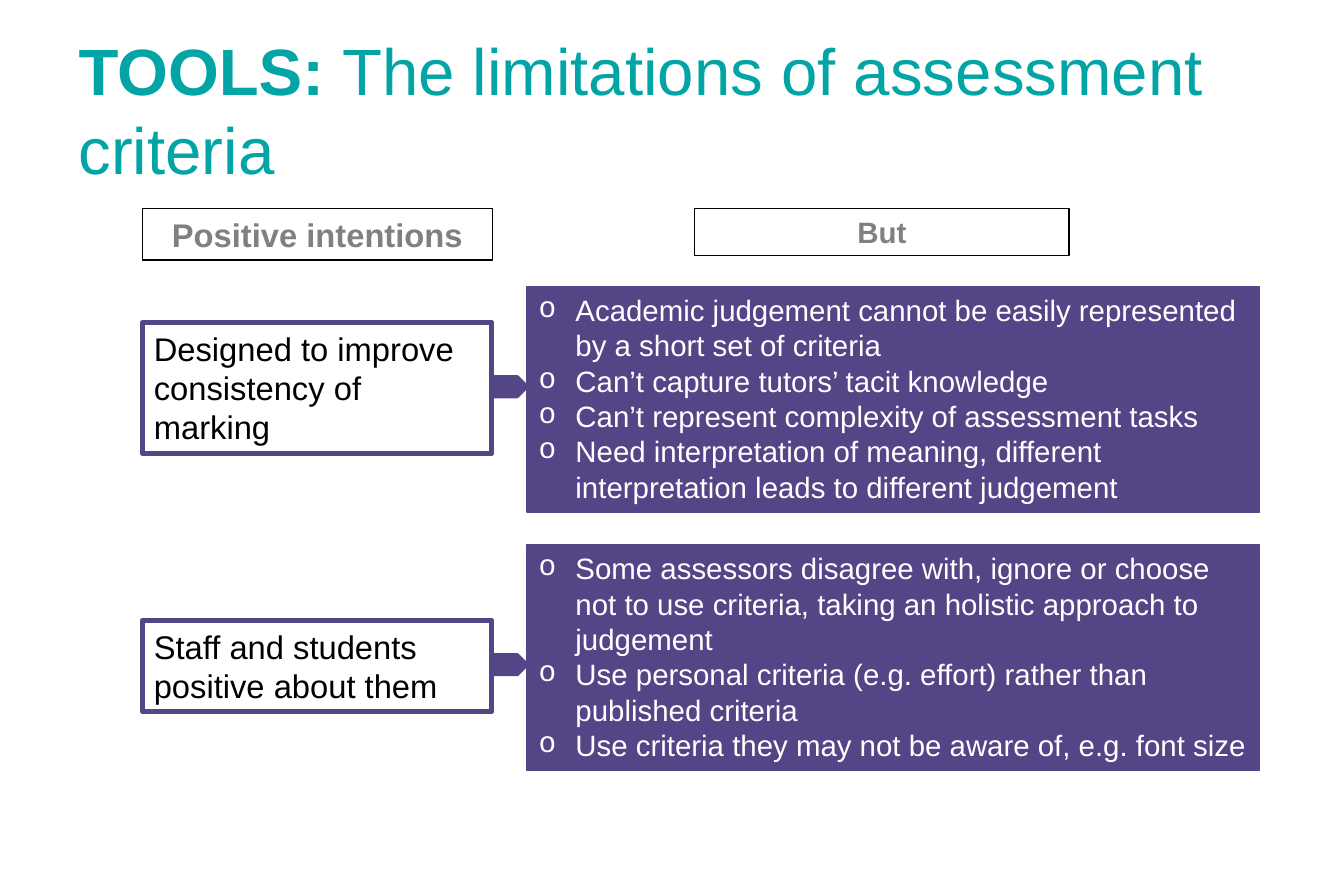
from lxml import etree
from pptx import Presentation
from pptx.dml.color import RGBColor
from pptx.enum import shapes, text
from pptx.oxml.ns import qn
from pptx.util import Pt

TITLE = [("TOOLS: ", True), ("The limitations of assessment criteria", False)]
# text, left, top, width, height, size
HEADINGS = [
    ("Positive intentions", 87, 127.5, 214.5, 31.5, 20),
    ("But", 425, 127.5, 229, 28.8, 18),
]
# intention, its top and height; limitations, their top; arrow top
ROWS = [
    (["Designed to improve consistency of", "marking"], 197.3, 80,
     ["Academic judgement cannot be easily represented by a short set of criteria",
      "Can’t capture tutors’ tacit knowledge",
      "Can’t represent complexity of assessment tasks",
      "Need interpretation of meaning, different interpretation leads to different judgement"],
     175, 230.4),
    (["Staff and students positive about them"], 379.5, 55.5,
     ["Some assessors disagree with, ignore or choose not to use criteria, "
      "taking an holistic approach to judgement",
      "Use personal criteria (e.g. effort) rather than published criteria",
      "Use criteria they may not be aware of, e.g. font size"],
     333, 400.4),
]

TEAL = RGBColor(0x02, 0xA4, 0xA6)
PURPLE = RGBColor(0x54, 0x45, 0x87)
GREY = RGBColor(0x80, 0x80, 0x80)
BLACK = RGBColor(0, 0, 0)
WHITE = RGBColor(0xFF, 0xFF, 0xFF)

INTENTION_LEFT, INTENTION_WIDTH = 87, 214
LIMITS_LEFT, LIMITS_WIDTH, LIMITS_HEIGHT = 322.5, 448, 138.2
ARROW_WIDTH, ARROW_HEIGHT = 20, 12.2
BULLET_INDENT = 22.5

LEFT, CENTER = text.PP_ALIGN.LEFT, text.PP_ALIGN.CENTER
RECT, ARROW = shapes.MSO_SHAPE.RECTANGLE, shapes.MSO_SHAPE.PENTAGON

prs = Presentation()
prs.slide_width, prs.slide_height = Pt(822.24), Pt(540)
slide = prs.slides.add_slide(prs.slide_layouts[6])


def set_font(font, **values):
    for key, value in {"name": "Arial", **values}.items():
        if key == "color":
            font.color.rgb = value
        else:
            setattr(font, key, value)


def add_bullet(paragraph):
    props = paragraph._p.get_or_add_pPr()
    props.set("marL", str(Pt(BULLET_INDENT)))
    props.set("indent", str(-Pt(BULLET_INDENT)))
    etree.SubElement(props, qn("a:buFont")).set("typeface", "Courier New")
    etree.SubElement(props, qn("a:buChar")).set("char", "o")


def add_box(kind, place, line, line_width, fill=None):
    box = slide.shapes.add_shape(kind, *map(Pt, place))
    box.shadow.inherit = False
    if fill is None:
        box.fill.background()
    else:
        box.fill.solid()
        box.fill.fore_color.rgb = fill
    box.line.color.rgb = line
    box.line.width = Pt(line_width)
    return box


def write(box, lines, align, bullets=False, **font):
    frame = box.text_frame
    frame.word_wrap = True
    frame.vertical_anchor = text.MSO_ANCHOR.TOP
    frame.auto_size = text.MSO_AUTO_SIZE.SHAPE_TO_FIT_TEXT
    for i, line in enumerate(lines):
        paragraph = frame.add_paragraph() if i else frame.paragraphs[0]
        paragraph.alignment = align
        if bullets:
            add_bullet(paragraph)
        run = paragraph.add_run()
        run.text = line
        set_font(run.font, **font)


title = slide.shapes.add_textbox(Pt(41), Pt(21.6), Pt(740), Pt(90)).text_frame
title.word_wrap = True
title.vertical_anchor = text.MSO_ANCHOR.MIDDLE
for words, bold in TITLE:
    run = title.paragraphs[0].add_run()
    run.text = words
    set_font(run.font, size=Pt(40), color=TEAL, bold=bold)

for heading, *place, size in HEADINGS:
    write(add_box(RECT, place, BLACK, 0.75), [heading], CENTER,
          size=Pt(size), color=GREY, bold=True)

for intention, top, height, limits, limits_top, arrow_top in ROWS:
    intention_box = add_box(RECT, (INTENTION_LEFT, top, INTENTION_WIDTH, height), PURPLE, 3)
    write(intention_box, intention, LEFT, size=Pt(20), color=BLACK)
    limits_box = add_box(RECT, (LIMITS_LEFT, limits_top, LIMITS_WIDTH, LIMITS_HEIGHT),
                         PURPLE, 0.75, PURPLE)
    write(limits_box, limits, LEFT, bullets=True, size=Pt(18), color=WHITE)
    add_box(ARROW, (LIMITS_LEFT - ARROW_WIDTH, arrow_top, ARROW_WIDTH, ARROW_HEIGHT),
            PURPLE, 2, PURPLE)

prs.save("out.pptx")
